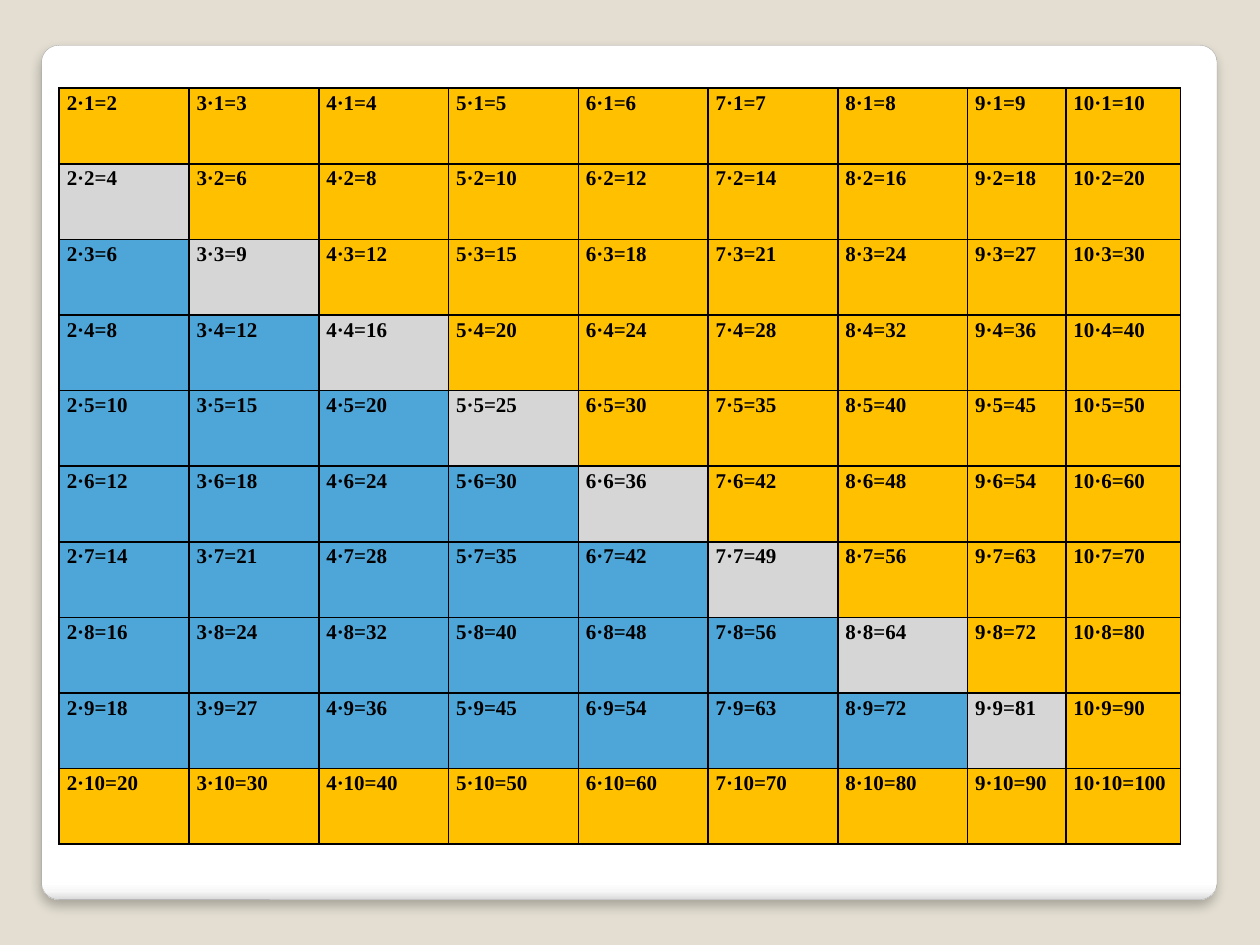
"""Build a slide with a coloured multiplication table on a rounded card."""
from lxml.etree import SubElement
from pptx import Presentation
from pptx.dml.color import RGBColor
from pptx.enum.shapes import MSO_SHAPE
from pptx.oxml import parse_xml
from pptx.oxml.ns import nsdecls, qn
from pptx.util import Inches, Pt


def color(hex_value):
    return RGBColor.from_string(hex_value)


YELLOW, GRAY, BLUE = "FFC000", "D6D6D6", "4EA5D8"
COLUMN_WIDTHS = [1.03] * 7 + [0.78, 0.91]
ROW_HEIGHT = 0.6
FACTORS = range(2, 11)
MULTIPLIERS = range(1, 11)
CARD_STOPS = [(0, "FFFFFF"), (98, "FFFFFF"), (99, "F7F7F7"), (100, "DADADA")]

presentation = Presentation()
presentation.slide_width = Inches(10)
presentation.slide_height = Inches(7.5)
slide = presentation.slides.add_slide(presentation.slide_layouts[6])
slide.background.fill.solid()
slide.background.fill.fore_color.rgb = color("E3DED1")

card = slide.shapes.add_shape(
    MSO_SHAPE.ROUNDED_RECTANGLE, Inches(0.33), Inches(0.36), Inches(9.33), Inches(6.78))
card.adjustments[0] = 0.02
card.line.color.rgb = color("A4A4A4")
card.line.width = Pt(0.16)
card.fill.gradient()
card.fill.gradient_angle = 270
stop_list = card.element.spPr.find(".//" + qn("a:gsLst"))
stop_list.clear()
for position, shade in CARD_STOPS:
    stop = SubElement(stop_list, qn("a:gs"), pos=str(position * 1000))
    SubElement(stop, qn("a:srgbClr"), val=shade)

card.shadow.inherit = False
card.element.spPr.find(qn("a:effectLst")).append(parse_xml(
    f'<a:outerShdw {nsdecls("a")} blurRad="{Pt(6)}" dist="{Pt(4)}" dir="5400000" '
    'algn="t" rotWithShape="0"><a:srgbClr val="000000"><a:alpha val="25000"/>'
    '</a:srgbClr></a:outerShdw>'))

products = slide.shapes.add_table(
    len(MULTIPLIERS), len(FACTORS), Inches(0.47), Inches(0.7),
    Inches(sum(COLUMN_WIDTHS)), Inches(ROW_HEIGHT * len(MULTIPLIERS))).table
products.first_row = False
products.horz_banding = False
for column, width in zip(products.columns, COLUMN_WIDTHS):
    column.width = Inches(width)

for row, multiplier in enumerate(MULTIPLIERS):
    products.rows[row].height = Inches(ROW_HEIGHT)
    for column, factor in enumerate(FACTORS):
        cell = products.cell(row, column)
        cell.text = f"{factor}·{multiplier}={factor * multiplier}"
        cell.margin_left = cell.margin_right = Inches(0.06)
        cell.margin_top = cell.margin_bottom = 0

        paragraph = cell.text_frame.paragraphs[0]
        paragraph.line_spacing = 1.15
        paragraph.font.name = "Times New Roman"
        paragraph.font.size = Pt(12)
        paragraph.font.bold = True
        paragraph.font.color.rgb = color("000000")

        cell_properties = cell._tc.get_or_add_tcPr()
        for side in ("lnL", "lnR", "lnT", "lnB"):
            cell_properties.append(parse_xml(
                f'<a:{side} {nsdecls("a")} w="{Pt(1)}"><a:solidFill>'
                f'<a:srgbClr val="000000"/></a:solidFill></a:{side}>'))

        if multiplier == 10 or factor > multiplier:
            shade = YELLOW
        elif factor == multiplier:
            shade = GRAY
        else:
            shade = BLUE
        cell.fill.solid()
        cell.fill.fore_color.rgb = color(shade)

presentation.save("out.pptx")
